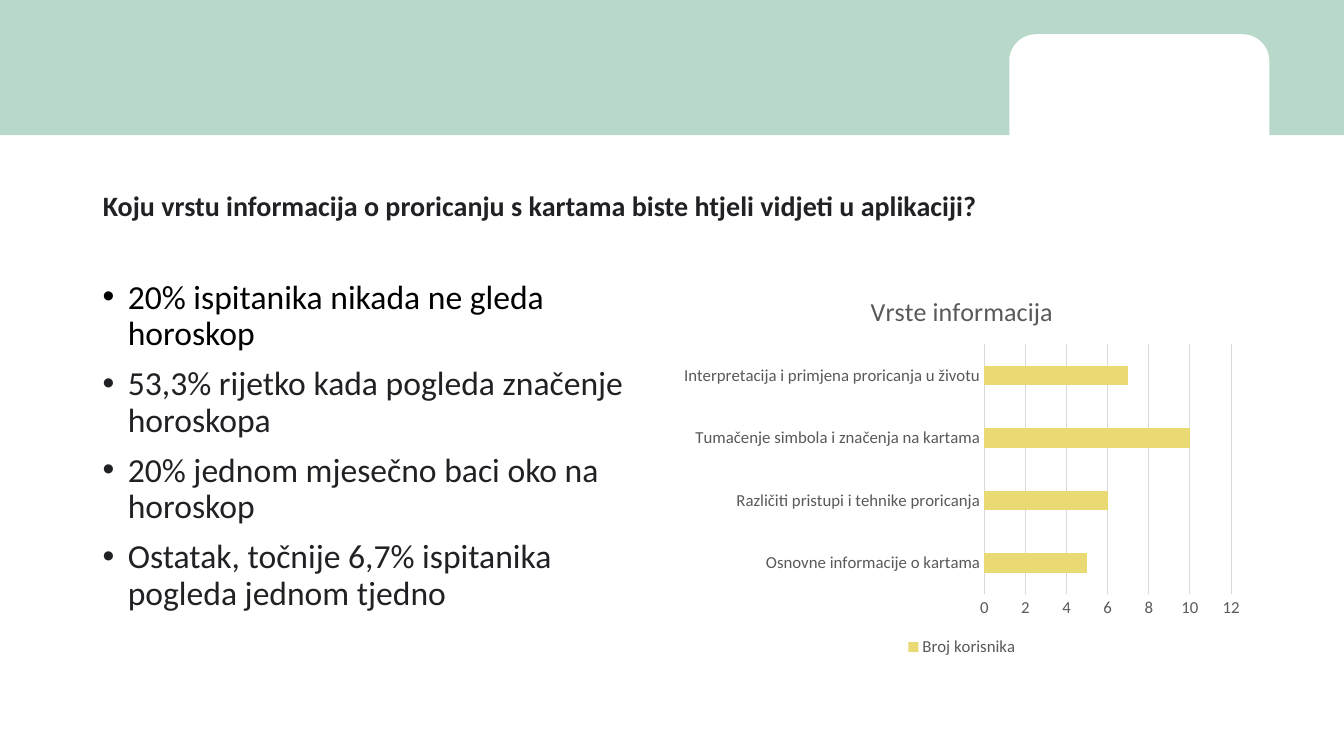
from dataclasses import dataclass

from lxml import etree
from pptx import Presentation
from pptx import util as u
from pptx.chart.data import CategoryChartData
from pptx.dml.color import RGBColor
from pptx.enum import chart as charts, shapes, text
from pptx.oxml.ns import qn


@dataclass(frozen=True)
class Theme:
    font: str = "Calibri"
    mint: str = "B8D8C9"
    white: str = "FFFFFF"
    black: str = "000000"
    ink: str = "202124"
    grey: str = "595959"
    rule: str = "D9D9D9"
    yellow: str = "E9DA73"
    question_size: float = 20
    bullet_size: float = 24
    chart_title_size: float = 18.6
    chart_size: float = 12


theme = Theme()


def style_font(font, size, color, bold=False):
    font.name = theme.font
    font.size = u.Pt(size)
    font.bold = bold
    font.color.rgb = RGBColor.from_string(color)


presentation = Presentation()
presentation.slide_width = u.Inches(13.33)
presentation.slide_height = u.Inches(7.5)
slide = presentation.slides.add_slide(presentation.slide_layouts[5])

left_margin = u.Inches(0.92)
content_top = u.Inches(2.73)
content_width = u.Inches(11.5)

# Header band with a folder tab
header_parts = [
    (shapes.MSO_SHAPE.RECTANGLE, 0, 0, 13.33, 1.34, theme.mint),
    (shapes.MSO_SHAPE.ROUNDED_RECTANGLE, 10.01, 0.34, 2.58, 1.6, theme.white),
]
for kind, left, top, width, height, color in header_parts:
    shape = slide.shapes.add_shape(
        kind, u.Inches(left), u.Inches(top), u.Inches(width), u.Inches(height))
    shape.shadow.inherit = False
    shape.fill.solid()
    shape.fill.fore_color.rgb = RGBColor.from_string(color)
    shape.line.fill.background()

# Question
question = slide.shapes.title
question.left, question.top = left_margin, u.Inches(1.82)
question.width, question.height = content_width, u.Inches(0.44)
question.text_frame.vertical_anchor = text.MSO_ANCHOR.TOP
question.text_frame.auto_size = text.MSO_AUTO_SIZE.NONE
paragraph = question.text_frame.paragraphs[0]
paragraph.alignment = text.PP_ALIGN.LEFT
run = paragraph.add_run()
run.text = "Koju vrstu informacija o proricanju s kartama biste htjeli vidjeti u aplikaciji?"
style_font(run.font, theme.question_size, theme.ink, bold=True)

# Findings
findings = [
    ("20% ispitanika nikada ne gleda horoskop", theme.black),
    ("53,3% rijetko kada pogleda značenje horoskopa", theme.ink),
    ("20% jednom mjesečno baci oko na horoskop", theme.ink),
    ("Ostatak, točnije 6,7% ispitanika pogleda jednom tjedno", theme.ink),
]
frame = slide.shapes.add_textbox(
    left_margin, content_top, u.Inches(5.47), u.Inches(4.02)).text_frame
frame.word_wrap = True
for index, (finding, color) in enumerate(findings):
    paragraph = frame.add_paragraph() if index else frame.paragraphs[0]
    paragraph.line_spacing = 0.9
    paragraph.space_before = u.Pt(10)
    properties = paragraph._p.get_or_add_pPr()
    properties.set("marL", str(u.Inches(0.25)))
    properties.set("indent", str(-u.Inches(0.25)))
    etree.SubElement(properties, qn("a:buFont")).set("typeface", "Arial")
    etree.SubElement(properties, qn("a:buChar")).set("char", "•")
    run = paragraph.add_run()
    run.text = finding
    style_font(run.font, theme.bullet_size, color)

# Bar chart
data = CategoryChartData(number_format="General")
data.categories = [
    "Osnovne informacije o kartama",
    "Različiti pristupi i tehnike proricanja",
    "Tumačenje simbola i značenja na kartama",
    "Interpretacija i primjena proricanja u životu",
]
data.add_series("Broj korisnika", [5, 6, 10, 7])
chart = slide.shapes.add_chart(
    charts.XL_CHART_TYPE.BAR_CLUSTERED, u.Inches(6.67), content_top,
    u.Inches(5.74), u.Inches(3.83), data).chart
style_font(chart.font, theme.chart_size, theme.grey)

chart.has_title = True
run = chart.chart_title.text_frame.paragraphs[0].add_run()
run.text = "Vrste informacija"
style_font(run.font, theme.chart_title_size, theme.grey)
chart.chart_title.include_in_layout = False

chart.has_legend = True
chart.legend.position = charts.XL_LEGEND_POSITION.BOTTOM
chart.legend.include_in_layout = False
style_font(chart.legend.font, theme.chart_size, theme.grey)

for axis in (chart.category_axis, chart.value_axis):
    axis.major_tick_mark = axis.minor_tick_mark = charts.XL_TICK_MARK.NONE
    style_font(axis.tick_labels.font, theme.chart_size, theme.grey)
chart.value_axis.has_major_gridlines = True
chart.value_axis.minimum_scale = 0
chart.value_axis.maximum_scale = 12
chart.value_axis.major_unit = 2
chart.value_axis.format.line.fill.background()
for ruled in (chart.category_axis, chart.value_axis.major_gridlines):
    ruled.format.line.color.rgb = RGBColor.from_string(theme.rule)
    ruled.format.line.width = u.Pt(0.75)

plot = chart.plots[0]
plot.vary_by_categories = False
plot.gap_width = 219
bars = plot.series[0].format.fill
bars.solid()
bars.fore_color.rgb = RGBColor.from_string(theme.yellow)

presentation.save("out.pptx")
